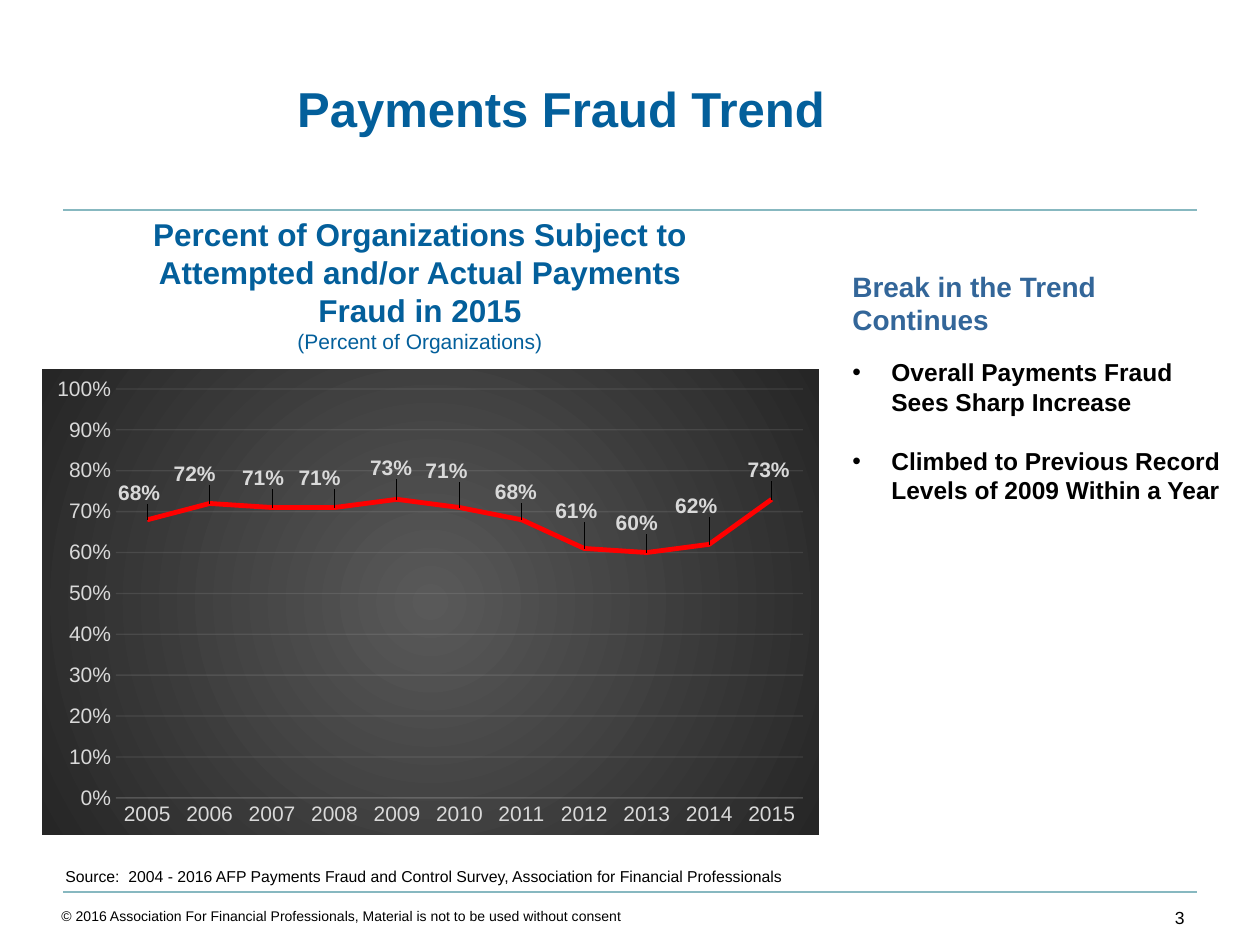
from lxml import etree
from pptx import Presentation
from pptx import util as u
from pptx.chart.data import CategoryChartData
from pptx.dml.color import RGBColor
from pptx.enum import chart as ch, shapes, text
from pptx.oxml import parse_xml
from pptx.oxml.ns import nsdecls, qn

FONT = "Arial"
BLUE = RGBColor(0x03, 0x5F, 0x9B)
SLATE = RGBColor(0x33, 0x66, 0x99)
TEAL = RGBColor(0x87, 0xB8, 0xC0)
BLACK = RGBColor(0, 0, 0)
PALE = RGBColor(0xD9, 0xD9, 0xD9)
RED = RGBColor(0xFF, 0, 0)
LEFT, CENTER, RIGHT = text.PP_ALIGN.LEFT, text.PP_ALIGN.CENTER, text.PP_ALIGN.RIGHT

# Content: paragraphs are (text, size, colour, bold, alignment, space before, bullet)
TITLE = [("Payments Fraud Trend", 28, BLUE, True, CENTER, 0, False)]
TITLE_BOX = (40, 72, 1042, 72)
TEXT_BOXES = [
    ((105, 209, 630, 152), [
        ("Percent of Organizations Subject to Attempted and/or Actual Payments Fraud in 2015",
         18, BLUE, True, CENTER, 0, False),
        ("(Percent of Organizations)", 12, BLUE, False, CENTER, 0, False)]),
    ((53, 861, 766, 31), [
        ("Source:  2004 - 2016 AFP Payments Fraud and Control Survey, "
         "Association for Financial Professionals", 9, BLACK, False, LEFT, 0, False)]),
    ((840, 263, 399, 280), [
        ("Break in the Trend Continues", 16, SLATE, True, LEFT, 0, False),
        ("Overall Payments Fraud Sees Sharp Increase", 14, BLACK, True, LEFT, 12, True),
        ("Climbed to Previous Record Levels of 2009 Within a Year",
         14, BLACK, True, LEFT, 17, True)]),
    ((1134, 901, 63, 44), [("3", 10, BLACK, False, RIGHT, 0, False)]),
    ((49, 901, 1066, 44), [
        ("© 2016 Association For Financial Professionals, "
         "Material is not to be used without consent", 8, BLACK, False, LEFT, 0, False)]),
]
RULES_Y = (210, 892)
RULE_X = (63, 1197)

# Year, share of organizations, label offset from its point in px
TREND = [
    (2005, 0.68, (-8, -27)), (2006, 0.72, (-15, -29)), (2007, 0.71, (-9, -29)),
    (2008, 0.71, (-15, -29)), (2009, 0.73, (-6, -31)), (2010, 0.71, (-13, -36)),
    (2011, 0.68, (-6, -28)), (2012, 0.61, (-8, -37)), (2013, 0.60, (-10, -29)),
    (2014, 0.62, (-13, -38)), (2015, 0.73, (-3, -29)),
]
CHART_BOX = (42, 369, 777, 466)
PLOT_BOX = (74, 20, 687, 409)  # within the chart


def px(n):
    return u.Emu(round(n * 914400 / 126))


def set_font(font, size, color, bold=False):
    font.name, font.size, font.bold = FONT, u.Pt(size), bold
    font.color.rgb = color


def write(frame, paragraphs):
    frame.word_wrap = True
    frame.auto_size = text.MSO_AUTO_SIZE.NONE
    frame.vertical_anchor = text.MSO_ANCHOR.TOP
    for i, (words, size, color, bold, align, before, bullet) in enumerate(paragraphs):
        para = frame.add_paragraph() if i else frame.paragraphs[0]
        para.alignment = align
        if before:
            para.space_before = u.Pt(before)
        if bullet:
            props = para._p.get_or_add_pPr()
            props.set("marL", str(px(39)))
            props.set("indent", str(-px(39)))
            etree.SubElement(props, qn("a:buFont")).set("typeface", FONT)
            etree.SubElement(props, qn("a:buChar")).set("char", "•")
        run = para.add_run()
        run.text = words
        set_font(run.font, size, color, bold)


def manual_layout(x, y, size=None):
    """Layout in fractions of the chart, from px."""
    width, height = CHART_BOX[2:]
    parts = [("x", x / width), ("y", y / height)]
    modes = ""
    if size:
        modes = ('<c:layoutTarget val="inner"/><c:xMode val="edge"/>'
                 '<c:yMode val="edge"/>')
        parts += [("w", size[0] / width), ("h", size[1] / height)]
    values = "".join(f'<c:{name} val="{value:.4f}"/>' for name, value in parts)
    return parse_xml(f'<c:layout {nsdecls("c")}><c:manualLayout>{modes}{values}'
                     '</c:manualLayout></c:layout>')


def faint_line(line):
    line.color.rgb = RGBColor(0xF2, 0xF2, 0xF2)
    line.width = u.Pt(0.75)
    color = line._get_or_add_ln().find(".//" + qn("a:srgbClr"))
    etree.SubElement(color, qn("a:alpha")).set("val", "10000")


def add_trend_chart(slide):
    data = CategoryChartData(number_format="0%")
    data.categories = [str(year) for year, _, _ in TREND]
    data.add_series("Series 1", [share for _, share, _ in TREND])
    chart = slide.shapes.add_chart(
        ch.XL_CHART_TYPE.LINE, *map(px, CHART_BOX), data).chart
    chart.has_legend = chart.has_title = False
    set_font(chart.font, 10, BLACK)

    # Axes
    years, shares = chart.category_axis, chart.value_axis
    shares.minimum_scale, shares.maximum_scale, shares.major_unit = 0, 1, 0.1
    shares.tick_labels.number_format = "0%"
    shares.tick_labels.number_format_is_linked = False
    for axis in (years, shares):
        axis.major_tick_mark = axis.minor_tick_mark = ch.XL_TICK_MARK.NONE
        set_font(axis.tick_labels.font, 12, PALE)
    faint_line(years.format.line)
    shares.format.line.fill.background()
    faint_line(shares.major_gridlines.format.line)

    # Line and labels
    plot = chart.plots[0]
    plot.vary_by_categories = False
    trend = plot.series[0]
    trend.smooth = False
    trend.marker.style = ch.XL_MARKER_STYLE.NONE
    trend.format.line.color.rgb = RED
    trend.format.line.width = u.Pt(2.75)
    for i, (_, _, offset) in enumerate(TREND):
        label = trend.points[i].data_label
        set_font(label.font, 12, PALE, True)
        label.position = ch.XL_LABEL_POSITION.CENTER
    labels = trend._element.findall(".//" + qn("c:dLbl"))
    for label, (_, _, offset) in zip(labels, TREND):
        label.find(qn("c:idx")).addnext(manual_layout(*offset))

    # Plot area and dark radial background
    space = chart._chartSpace
    area = space.find(".//" + qn("c:plotArea"))
    for old in area.findall(qn("c:layout")):
        area.remove(old)
    area.insert(0, manual_layout(*PLOT_BOX[:2], PLOT_BOX[2:]))
    space.find(qn("c:chart")).addnext(parse_xml(
        f'<c:spPr {nsdecls("c", "a")}><a:gradFill><a:gsLst>'
        '<a:gs pos="0"><a:srgbClr val="595959"/></a:gs>'
        '<a:gs pos="100000"><a:srgbClr val="262626"/></a:gs></a:gsLst>'
        '<a:path path="circle"><a:fillToRect l="50000" t="50000" r="50000" b="50000"/>'
        '</a:path></a:gradFill><a:ln><a:noFill/></a:ln></c:spPr>'))


def main():
    deck = Presentation()
    deck.slide_width, deck.slide_height = u.Inches(10), u.Inches(7.5)
    slide = deck.slides.add_slide(deck.slide_layouts[5])

    # Rules
    for y in RULES_Y:
        rule = slide.shapes.add_connector(
            shapes.MSO_CONNECTOR.STRAIGHT, px(RULE_X[0]), px(y), px(RULE_X[1]), px(y))
        rule.line.color.rgb = TEAL
        rule.line.width = u.Pt(1)
        etree.SubElement(rule._element.spPr, qn("a:effectLst"))

    # Title and texts
    title = slide.shapes.title
    title.left, title.top, title.width, title.height = map(px, TITLE_BOX)
    write(title.text_frame, TITLE)
    for box, paragraphs in TEXT_BOXES:
        write(slide.shapes.add_textbox(*map(px, box)).text_frame, paragraphs)

    add_trend_chart(slide)
    deck.save("out.pptx")


if __name__ == "__main__":
    main()
